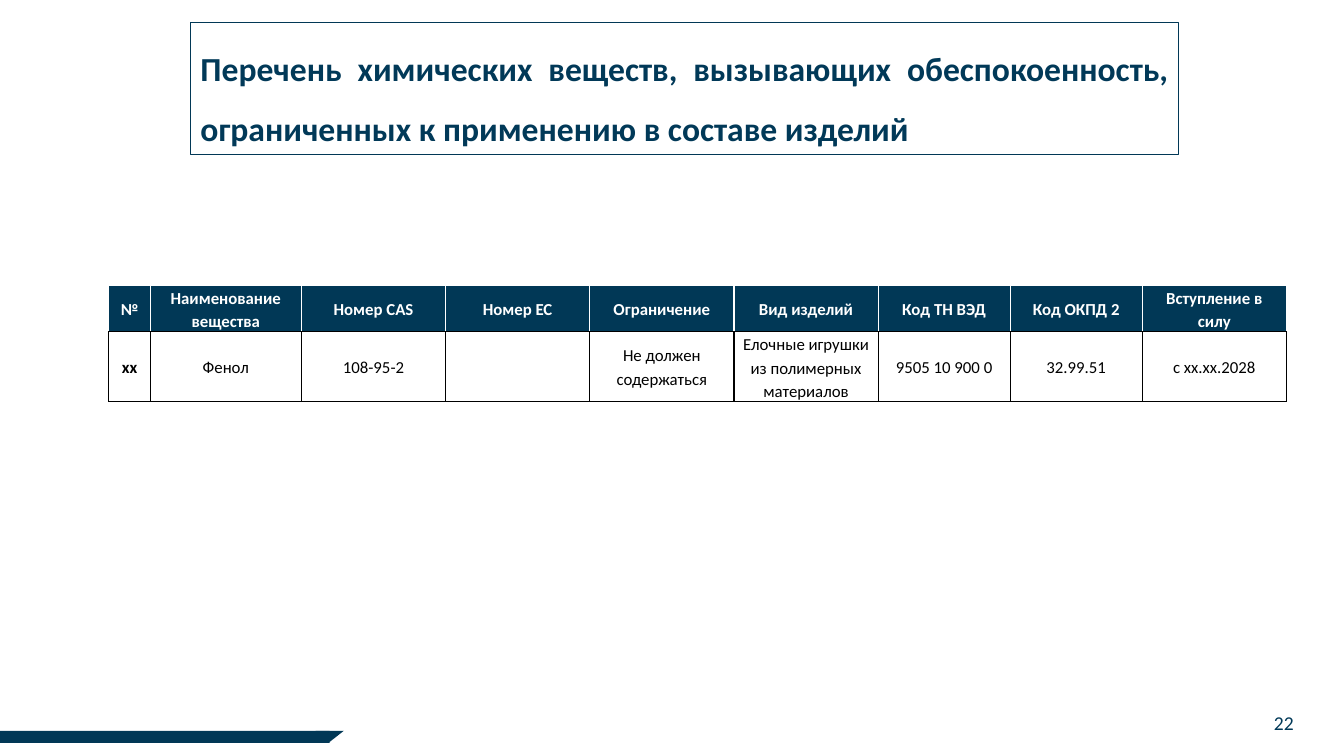
from lxml.etree import SubElement
from pptx import Presentation
from pptx.dml.color import RGBColor
from pptx.enum.shapes import MSO_SHAPE
from pptx.enum.text import MSO_ANCHOR, PP_ALIGN
from pptx.oxml.ns import qn
from pptx.util import Pt

SCALE = 9144
FONT = "Calibri"
NAVY, INK, WHITE, BLACK = "013856", "013958", "FFFFFF", "000000"
WIDTHS = [41, 150, 143, 143, 143, 143, 131, 131, 143]
HEIGHTS = [45, 69]
HEADS = ["№", "Наименование вещества", "Номер CAS", "Номер ЕС", "Ограничение",
         "Вид изделий", "Код ТН ВЭД", "Код ОКПД 2", "Вступление в силу"]
VALUES = ["хх", "Фенол", "108-95-2", "", "Не должен содержаться",
          "Елочные игрушки из полимерных материалов", "9505 10 900 0",
          "32.99.51", "с хх.хх.2028"]


def px(*sizes):
    return [size * SCALE for size in sizes]


def paint(color, code):
    color.rgb = RGBColor.from_string(code)


def write(frame, text, size, code, align, bold=False, space=1.0):
    para = frame.paragraphs[0]
    para.alignment = align
    para.line_spacing = space
    run = para.add_run()
    run.text = text
    run.font.name = FONT
    run.font.size = Pt(size)
    run.font.bold = bold
    paint(run.font.color, code)
    return para


def add_bar(slide, kind, box, turn=0):
    bar = slide.shapes.add_shape(kind, *px(*box))
    bar.shadow.inherit = False
    bar.rotation = turn
    bar.fill.solid()
    paint(bar.fill.fore_color, NAVY)
    bar.line.fill.background()


def add_title(slide, text, box):
    title = slide.shapes.add_textbox(*px(*box))
    title.line.width = Pt(0.75)
    paint(title.line.color, NAVY)
    frame = title.text_frame
    frame.word_wrap = True
    frame.vertical_anchor = MSO_ANCHOR.MIDDLE
    para = write(frame, text, 24, INK, PP_ALIGN.JUSTIFY, True, 1.5)
    para.space_after = Pt(10)


def add_number(slide, text, box):
    frame = slide.shapes.add_textbox(*px(*box)).text_frame
    frame.word_wrap = True
    write(frame, text, 14, INK, PP_ALIGN.RIGHT)


def edge(cell, side, code):
    line = SubElement(cell._tc.get_or_add_tcPr(), qn("a:" + side), w=str(Pt(1)))
    fill = SubElement(line, qn("a:solidFill"))
    SubElement(fill, qn("a:srgbClr"), val=code)


def fill_cell(cell, text, head, bold):
    side = WHITE if head else BLACK
    for name, code in zip(("lnL", "lnR", "lnT", "lnB"), (side, side, side, BLACK)):
        edge(cell, name, code)
    if head:
        cell.fill.solid()
        paint(cell.fill.fore_color, NAVY)
    else:
        cell.fill.background()
    cell.vertical_anchor = MSO_ANCHOR.MIDDLE
    cell.margin_left, cell.margin_right = px(7, 7)
    cell.margin_top = cell.margin_bottom = 0
    if text:
        write(cell.text_frame, text, 12, side, PP_ALIGN.CENTER, bold, 1.15)


def add_grid(slide, rows, left, top):
    box = px(left, top, sum(WIDTHS), sum(HEIGHTS))
    table = slide.shapes.add_table(len(rows), len(WIDTHS), *box).table
    table.horz_banding = False
    for col, width in zip(table.columns, px(*WIDTHS)):
        col.width = width
    for row, height in zip(table.rows, px(*HEIGHTS)):
        row.height = height
    for r, texts in enumerate(rows):
        for c, text in enumerate(texts):
            fill_cell(table.cell(r, c), text, r == 0, r == 0 or c == 0)


def main():
    deck = Presentation()
    deck.slide_width, deck.slide_height = px(1333, 750)
    slide = deck.slides.add_slide(deck.slide_layouts[6])
    add_bar(slide, MSO_SHAPE.ISOSCELES_TRIANGLE, (313, 725, 28, 11), 180)
    add_bar(slide, MSO_SHAPE.RECTANGLE, (0, 725, 327, 12))
    add_title(slide, "Перечень химических веществ, вызывающих обеспокоенность, "
              "ограниченных к применению в составе изделий", (189, 22, 980, 131))
    add_number(slide, "22", (993, 700, 300, 40))
    add_grid(slide, [HEADS, VALUES], 108, 283)
    deck.save("out.pptx")


if __name__ == "__main__":
    main()
